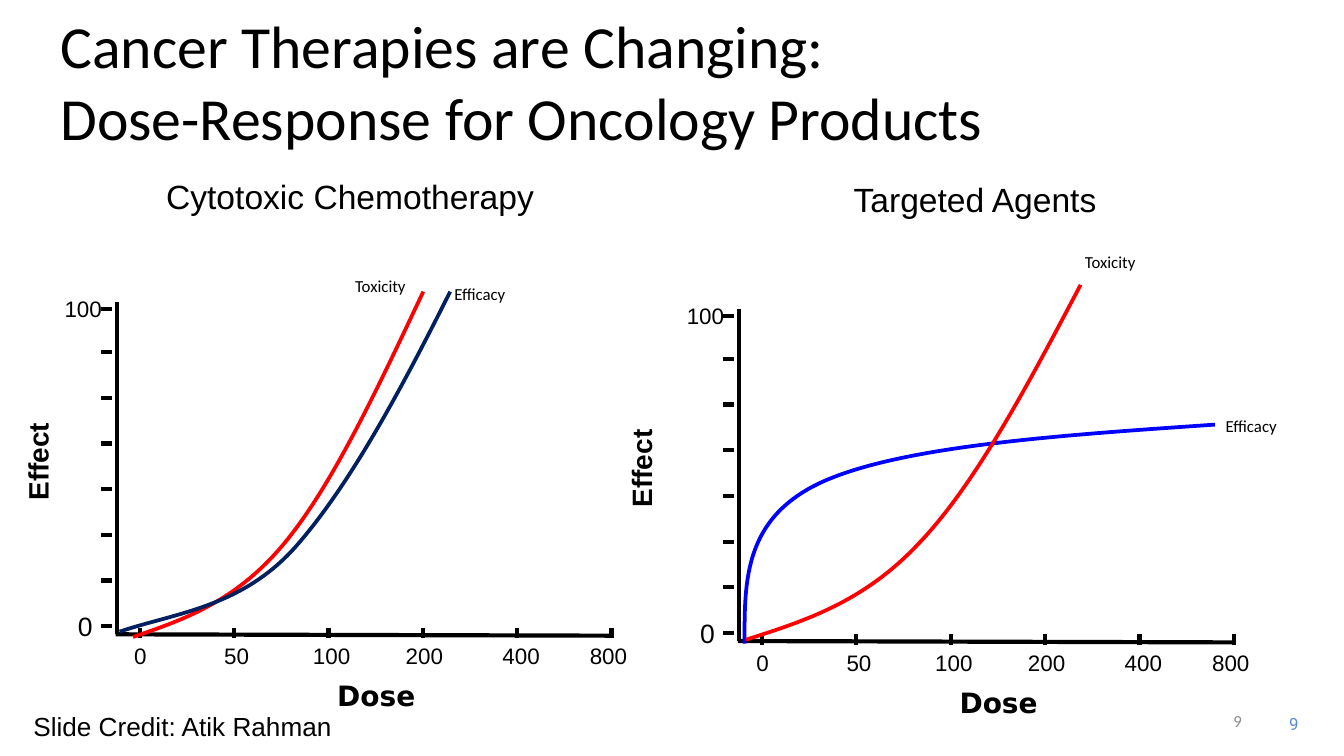
"""Build a slide comparing dose-response curves of two kinds of cancer therapy."""
from dataclasses import dataclass

from lxml import etree
from pptx import Presentation
from pptx.dml.color import RGBColor
from pptx.enum.shapes import MSO_CONNECTOR
from pptx.enum.text import MSO_ANCHOR, PP_ALIGN
from pptx.oxml.ns import qn
from pptx.shapes.shapetree import GroupShapes
from pptx.util import Inches, Pt

LEFT, CENTER, RIGHT = PP_ALIGN.LEFT, PP_ALIGN.CENTER, PP_ALIGN.RIGHT
TOP, MIDDLE = MSO_ANCHOR.TOP, MSO_ANCHOR.MIDDLE
STRAIGHT = MSO_CONNECTOR.STRAIGHT

SLIDE_WIDTH, SLIDE_HEIGHT = Inches(10), Inches(5.625)
COLUMN, ROW = SLIDE_WIDTH / 100, SLIDE_HEIGHT / 56.25
COLORS = {
    "ink": "000000",
    "toxicity": "FF0000",
    "cytotoxic": "002060",
    "targeted": "0000FF",
    "page": "8C8C8C",
    "footer": "558ED5",
}
DOSES = {"0": 9, "50": 15.7, "100": 22.3, "200": 29.2, "400": 36.4, "800": 42.9}
DOSE_TICKS = [10.4 + 7.02 * step for step in range(len(DOSES))]
EFFECT_TICKS = [46.6 - 3.4 * step for step in range(7)] + [23]

Point = tuple[float, float]
Box = tuple[float, float, float, float]


@dataclass(frozen=True)
class Curve:
    name: str
    color: str
    points: tuple[Point, ...]
    label: Point


@dataclass(frozen=True)
class Panel:
    title: str
    title_box: Box
    origin: Point
    effect_left: float
    curves: tuple[Curve, ...]


PANELS = (
    Panel("Cytotoxic Chemotherapy", (11, 12.6, 30.1, 4), (0, 0), -2.2, (
        Curve("Toxicity", "toxicity", (
            (9.9, 47.4), (13.7, 46.1), (17.5, 44.8), (21.1, 40.5),
            (24.7, 36.2), (28.1, 28.9), (31.5, 21.7)), (25.3, 20)),
        Curve("Efficacy", "cytotoxic", (
            (8.9, 47), (13.1, 45.6), (17.9, 45.2), (21.9, 40.8),
            (25.9, 36.3), (29.7, 29.3), (33.5, 21.7)), (32.7, 20.6)),
    )),
    Panel("Targeted Agents", (58.8, 12.8, 27.5, 4), (46.3, 0.5), 42.7, (
        Curve("Efficacy", "targeted", (
            (55.4, 47.9), (55.4, 43.3), (55.3, 38.6), (61.1, 35.9),
            (67, 33.2), (78.7, 32.4), (90.4, 31.6)), (90.1, 30.4)),
        Curve("Toxicity", "toxicity", (
            (55.5, 47.6), (59.9, 46.2), (64.3, 44.8), (68.4, 40.4),
            (72.6, 36), (76.5, 28.6), (80.4, 21.2)), (79.6, 18.2)),
    )),
)


def add_text(shapes: GroupShapes, text: str, box: Box, *, size: float,
             font: str = "Arial", color: str = "ink", bold: bool = False,
             align: PP_ALIGN = LEFT, anchor: MSO_ANCHOR = TOP,
             inset: Point = (1, 0.5), rotation: float = 0) -> None:
    """Add a text box placed in grid columns and rows."""
    left, top, width, height = box
    area = shapes.add_textbox(round(left * COLUMN), round(top * ROW),
                              round(width * COLUMN), round(height * ROW))
    area.rotation = rotation
    frame = area.text_frame
    frame.word_wrap = True
    frame.vertical_anchor = anchor
    frame.margin_left = frame.margin_right = round(inset[0] * COLUMN)
    frame.margin_top = frame.margin_bottom = round(inset[1] * ROW)
    paragraph = frame.paragraphs[0]
    paragraph.text = text
    paragraph.alignment = align
    for run in paragraph.runs:
        run.font.size = Pt(size)
        run.font.name = font
        run.font.bold = bold
        run.font.color.rgb = RGBColor.from_string(COLORS[color])


def add_line(shapes: GroupShapes, start: Point, end: Point) -> None:
    """Add one axis or tick line."""
    line = shapes.add_connector(
        STRAIGHT, round(start[0] * COLUMN), round(start[1] * ROW),
        round(end[0] * COLUMN), round(end[1] * ROW))
    line.line.width = Pt(2.25)
    line.line.color.rgb = RGBColor.from_string(COLORS["ink"])
    etree.SubElement(line._element.spPr, qn("a:effectLst"))


def add_curve(shapes: GroupShapes, curve: Curve) -> None:
    """Add a Bezier curve and its label."""
    points = [(round(x * COLUMN), round(y * ROW)) for x, y in curve.points]
    builder = shapes.build_freeform(*points[0])
    builder.add_line_segments(points[1:], close=False)
    outline = builder.convert_to_shape()
    outline.shadow.inherit = False
    outline.fill.background()
    outline.line.width = Pt(2)
    outline.line.color.rgb = RGBColor.from_string(COLORS[curve.color])
    segments = list(outline._element.iter(qn("a:lnTo")))
    for first in range(0, len(segments), 3):
        bezier = etree.SubElement(segments[first].getparent(), qn("a:cubicBezTo"))
        for segment in segments[first:first + 3]:
            bezier.append(segment[0])
            segment.getparent().remove(segment)
    add_text(shapes, curve.name, (*curve.label, 6, 2.5), size=9,
             font="Calibri", align=CENTER, inset=(0, 0.5))


def add_panel(shapes: GroupShapes, panel: Panel) -> None:
    """Add one titled chart with its axes and curves."""
    dx, dy = panel.origin
    add_text(shapes, panel.title, panel.title_box, size=18, align=CENTER)
    add_line(shapes, (8.7 + dx, 47.2 + dy), (8.7 + dx, 22.5 + dy))
    add_line(shapes, (8.6 + dx, 47.2 + dy), (45.5 + dx, 47.3 + dy))
    for x in DOSE_TICKS:
        add_line(shapes, (x + dx, 46.7 + dy), (x + dx, 47.5 + dy))
    for y in EFFECT_TICKS:
        add_line(shapes, (8.3 + dx, y + dy), (7.5 + dx, y + dy))
    for dose, x in DOSES.items():
        add_text(shapes, dose, (x + dx, 47.3 + dy, 5.2, 3), size=12)
    add_text(shapes, "0", (5.8 + dx, 45.4 + dy, 1.5, 2.4), size=14.2, inset=(0, 0))
    add_text(shapes, "100", (4.8 + dx, 22 + dy, 3.2, 2), size=12, inset=(0, 0))
    add_text(shapes, "Effect", (panel.effect_left, 32.6 + dy, 10, 3.5), size=15,
             bold=True, align=CENTER, rotation=270)
    add_text(shapes, "Dose", (13.1 + dx, 50 + dy, 29.8, 3.5), size=15,
             font="DejaVu Sans", bold=True, align=CENTER)
    for curve in panel.curves:
        add_curve(shapes, curve)


def main() -> None:
    """Build and save the slide."""
    deck = Presentation()
    deck.slide_width, deck.slide_height = SLIDE_WIDTH, SLIDE_HEIGHT
    slide = deck.slides.add_slide(deck.slide_layouts[6])
    shapes = slide.shapes
    add_text(shapes, "Cancer Therapies are Changing:\nDose-Response for Oncology Products",
             (3.5, 2.2, 93.1, 7.6), size=32, font="Calibri", anchor=MIDDLE)
    for panel in PANELS:
        add_panel(shapes.add_group_shape().shapes, panel)
    add_text(shapes, "Slide Credit: Atik Rahman", (1.5, 52.4, 26, 3.4), size=14)
    add_text(shapes, "9", (70.6, 52.1, 22.5, 3), size=9, font="Calibri",
             color="page", align=RIGHT, anchor=MIDDLE, inset=(0.7, 0.4))
    add_text(shapes, "9", (94, 52.6, 3.6, 2.5), size=9, font="Roboto",
             color="footer", align=RIGHT)
    deck.save("out.pptx")


if __name__ == "__main__":
    main()
